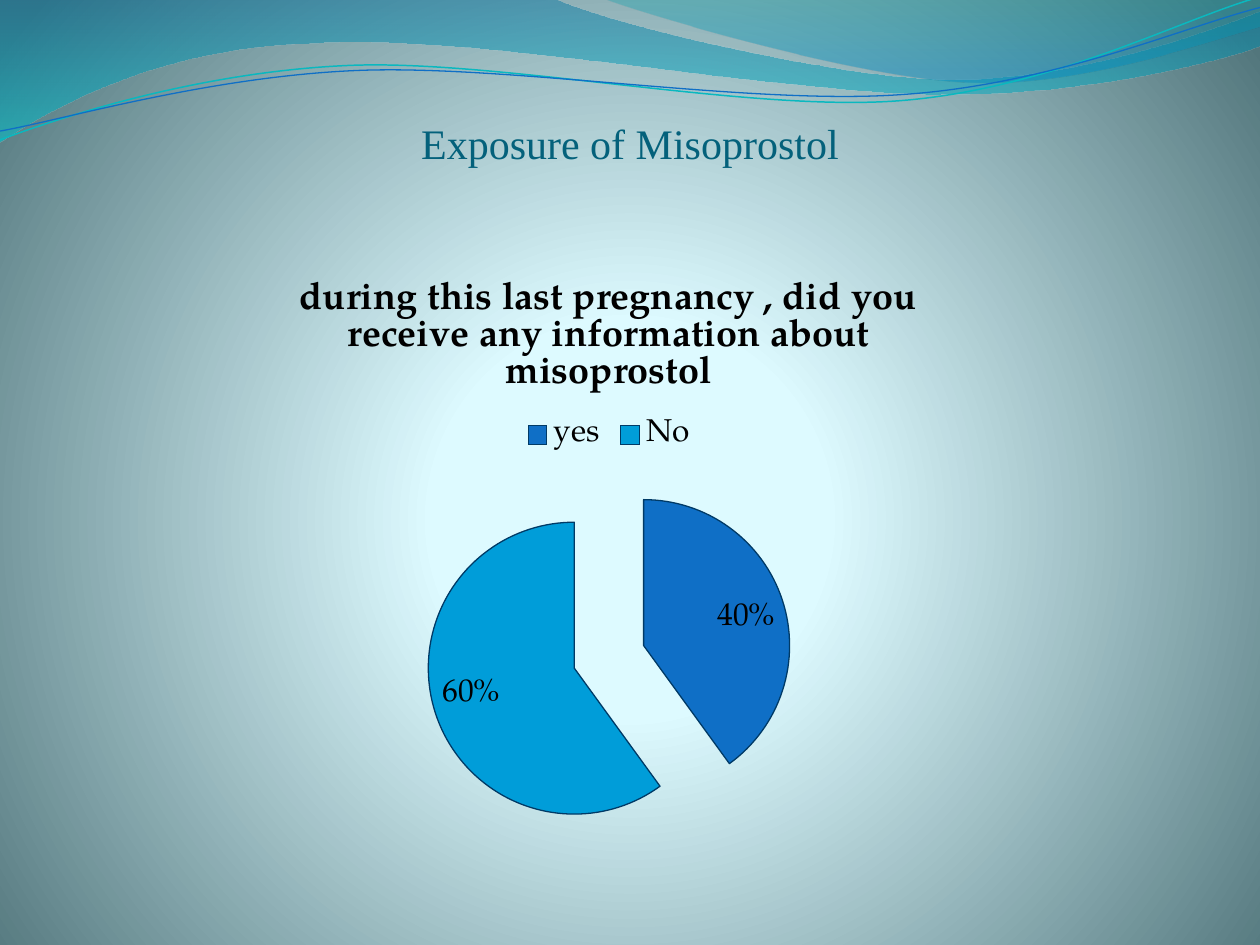
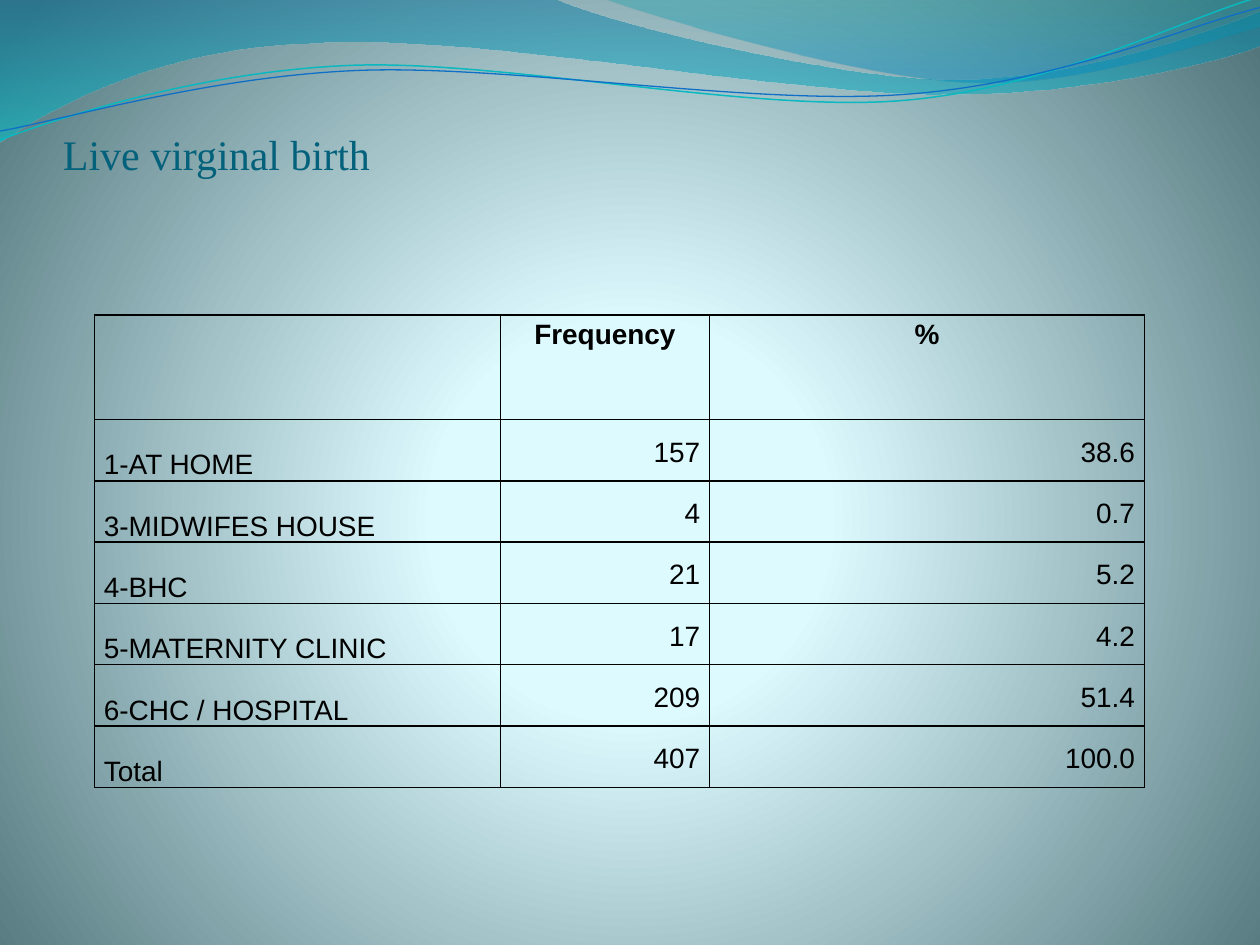
"""Build two survey result slides with a wave header, a pie chart and a table."""
import math
from dataclasses import dataclass

from lxml import etree
from pptx import Presentation
from pptx import util as u
from pptx.chart.data import CategoryChartData
from pptx.dml.color import RGBColor
from pptx.enum import chart as ch, text as tx
from pptx.oxml.ns import qn


@dataclass(frozen=True)
class Theme:
    ink: str = "000000"
    head: str = "04617B"
    blue: str = "0F6FC6"
    sky: str = "009DD9"
    teal: str = "0AB8BF"
    edge: str = "003A66"
    serif: str = "Times New Roman"
    sans: str = "Arial"
    book: str = "TeX Gyre Pagella"
    title: float = 24
    cell: float = 16
    label: float = 18
    ask: float = 21.6
    back: tuple = ((0, "DEFBFF", 100), (25, "DDFAFF", 100), (100, "52767C", 100))
    deep: tuple = ((0, "0074A1", 45), (100, "00C6CF", 55))
    pale: tuple = ((0, "00A1A9", 30), (80, "008BBF", 45))


T = Theme()
TILT = 357.3
PIVOT = (359.5, 42)

WIDE = [(0, 0), (316.8, -0.7),
        (342.7, 12.2, 478.1, 45.4, 545.8, 45.4),
        (614.2, 45.4, 689.8, 18.7, 720, 6.5), (720.7, 25.9),
        (707.8, 31.7, 626.4, 54.7, 537.1, 54),
        (447.1, 54, 275, 20.2, 185, 24.5),
        (92.9, 25.9, 33.1, 59.8, -0.7, 81.4), (0, 0)]
SIDE = [(344.9, -0.7),
        (366.5, 7.9, 491, 44.6, 553.7, 46.8),
        (616.3, 49.7, 691.9, 23, 720, 15.1), (720, 0), (344.9, -0.7)]
HIGH = [(0, 79.9),
        (34.6, 67, 113.8, 41, 199.4, 37.4),
        (284.4, 33.8, 427, 64.1, 513.4, 57.6),
        (599.8, 51.1, 675.4, 10.8, 718.6, -1.4)]
LOW = [(0, 74.9),
       (33.8, 69.1, 118.1, 43.9, 203.8, 40.3),
       (290.2, 36.7, 429.8, 60.5, 516.2, 54),
       (601.9, 48.2, 677.5, 15.1, 720, 4.3)]

ROWS = [("", "Frequency", "%"),
        ("1-AT HOME", "157", "38.6"),
        ("3-MIDWIFES HOUSE", "4", "0.7"),
        ("4-BHC", "21", "5.2"),
        ("5-MATERNITY CLINIC", "17", "4.2"),
        ("6-CHC / HOSPITAL", "209", "51.4"),
        ("Total", "407", "100.0")]


def hue(code):
    return RGBColor.from_string(code)


def sub(node, tag, **attrs):
    return etree.SubElement(node, qn(tag), {k: str(v) for k, v in attrs.items()})


def style(font, name, size, color, bold=False):
    font.name, font.size, font.bold = name, u.Pt(size), bold
    font.color.rgb = hue(color)


def grade(owner, fill, stops, ring=None):
    fill.gradient()
    node = owner.element.find(".//" + qn("a:gradFill"))
    for kid in list(node):
        node.remove(kid)
    group = sub(node, "a:gsLst")
    for pos, code, alpha in stops:
        color = sub(sub(group, "a:gs", pos=pos * 1000), "a:srgbClr", val=code)
        if alpha < 100:
            sub(color, "a:alpha", val=alpha * 1000)
    if ring:
        round_ = sub(node, "a:path", path="circle")
        sub(round_, "a:fillToRect", **{k: v * 1000 for k, v in zip("ltrb", ring)})
    else:
        sub(node, "a:lin", ang=5400000, scaled=1)


def turn(dot, angle):
    rad = math.radians(angle)
    x, y = dot[0] - PIVOT[0], dot[1] - PIVOT[1]
    return (PIVOT[0] + x * math.cos(rad) - y * math.sin(rad),
            PIVOT[1] + x * math.sin(rad) + y * math.cos(rad))


def curve(slide, steps, close, tilt=0):
    dots = [turn(step[n:n + 2], -tilt) for step in steps for n in range(0, len(step), 2)]
    dots = [(u.Pt(x), u.Pt(y)) for x, y in dots]
    pen = slide.shapes.build_freeform(*dots[0], scale=1.0)
    pen.add_line_segments(dots[1:], close=close)
    shape = pen.convert_to_shape()
    shape.shadow.inherit = False
    shape.rotation = tilt
    lines = iter(shape.element.findall(".//" + qn("a:lnTo")))
    for step in steps[1:]:
        first = next(lines)
        if len(step) == 6:
            bend = etree.Element(qn("a:cubicBezTo"))
            first.addprevious(bend)
            for line in (first, next(lines), next(lines)):
                bend.append(line[0])
                line.getparent().remove(line)
    return shape


def wave(slide, steps, stops):
    shape = curve(slide, steps, True)
    grade(shape, shape.fill, stops)
    shape.line.fill.background()


def thread(slide, steps, color, width):
    shape = curve(slide, steps, False, TILT)
    shape.fill.background()
    shape.line.color.rgb = hue(color)
    shape.line.width = u.Pt(width)


def page(deck):
    slide = deck.slides.add_slide(deck.slide_layouts[6])
    grade(slide, slide.background.fill, T.back, (10, 110, 10, 100))
    wave(slide, WIDE, T.deep)
    wave(slide, SIDE, T.pale)
    thread(slide, HIGH, T.teal, 0.85)
    thread(slide, LOW, T.blue, 0.75)
    return slide


def write(para, words, align, *look):
    para.alignment = align
    run = para.add_run()
    run.text = words
    style(run.font, *look)


def title(slide, words, height, align):
    box = slide.shapes.add_textbox(u.Pt(36), u.Pt(55.4), u.Pt(648), u.Pt(height))
    frame = box.text_frame
    frame.word_wrap = True
    frame.vertical_anchor = tx.MSO_ANCHOR.BOTTOM
    frame.margin_left = frame.margin_right = frame.margin_bottom = 0
    frame.margin_top = u.Pt(3.6)
    write(frame.paragraphs[0], words, align, T.serif, T.title, T.head)


def pie(slide, ask, shares):
    data = CategoryChartData()
    data.categories = list(shares)
    data.add_series("Series 1", list(shares.values()))
    chart = slide.shapes.add_chart(ch.XL_CHART_TYPE.PIE, u.Pt(90), u.Pt(144),
                                   u.Pt(516), u.Pt(345.6), data).chart
    style(chart.font, T.book, T.label, T.ink)
    chart.has_title = True
    write(chart.chart_title.text_frame.paragraphs[0], ask,
          tx.PP_ALIGN.CENTER, T.book, T.ask, T.ink, True)
    chart.chart_title.include_in_layout = False
    chart.has_legend = True
    chart.legend.position = ch.XL_LEGEND_POSITION.TOP
    chart.legend.include_in_layout = False
    plot = chart.plots[0]
    plot.vary_by_categories = True
    for n, color in enumerate((T.blue, T.sky)):
        look = plot.series[0].points[n].format
        look.fill.solid()
        look.fill.fore_color.rgb = hue(color)
        look.line.color.rgb = hue(T.edge)
        look.line.width = u.Pt(0.75)
    for mark in chart.element.xpath(".//c:ser/c:dPt[1] | .//c:dPt/c:spPr"):
        burst = etree.Element(qn("c:explosion"), val="25")
        mark.addprevious(burst)
    plot.has_data_labels = True
    tags = plot.data_labels
    tags.show_percentage, tags.show_value = True, False
    tags.number_format, tags.number_format_is_linked = "0%", False
    tags.position = ch.XL_LABEL_POSITION.INSIDE_END
    style(tags.font, T.book, T.label, T.ink)


def border(cell):
    props = cell._tc.get_or_add_tcPr()
    for n, side in enumerate("LRTB"):
        line = etree.Element(qn("a:ln" + side), w=str(u.Pt(1)))
        sub(sub(line, "a:solidFill"), "a:srgbClr", val=T.ink)
        props.insert(n, line)


def fill(cell, words, top, first):
    cell.fill.background()
    border(cell)
    cell.margin_left = cell.margin_right = u.Pt(5.4)
    cell.margin_top = cell.margin_bottom = 0
    if top:
        cell.vertical_anchor, align = tx.MSO_ANCHOR.TOP, tx.PP_ALIGN.CENTER
    elif first:
        cell.vertical_anchor, align = tx.MSO_ANCHOR.BOTTOM, tx.PP_ALIGN.LEFT
    else:
        cell.vertical_anchor, align = tx.MSO_ANCHOR.MIDDLE, tx.PP_ALIGN.RIGHT
    if words:
        para = cell.text_frame.paragraphs[0]
        para.line_spacing = 1.15
        write(para, words, align, T.sans, T.cell, T.ink, top)


def grid(slide, rows, widths, head, step):
    high = head + step * (len(rows) - 1)
    table = slide.shapes.add_table(len(rows), len(widths), u.Pt(54), u.Pt(180),
                                   u.Pt(sum(widths)), u.Pt(high)).table
    table.first_row = table.horz_banding = False
    for col, width in zip(table.columns, widths):
        col.width = u.Pt(width)
    for r, row in enumerate(rows):
        table.rows[r].height = u.Pt(step if r else head)
        for c, words in enumerate(row):
            fill(table.cell(r, c), words, r == 0, c == 0)


def main():
    deck = Presentation()
    deck.slide_width, deck.slide_height = u.Pt(720), u.Pt(540)

    slide = page(deck)
    title(slide, "Exposure of Misoprostol", 40.3, tx.PP_ALIGN.CENTER)
    pie(slide, "during this last pregnancy , did you receive any information "
        "about misoprostol", {"yes": 40, "No": 60})

    slide = page(deck)
    title(slide, "Live virginal birth", 46.8, tx.PP_ALIGN.LEFT)
    grid(slide, ROWS, (231.9, 119.6, 248.5), 59.7, 35.05)

    deck.save("out.pptx")


if __name__ == "__main__":
    main()
